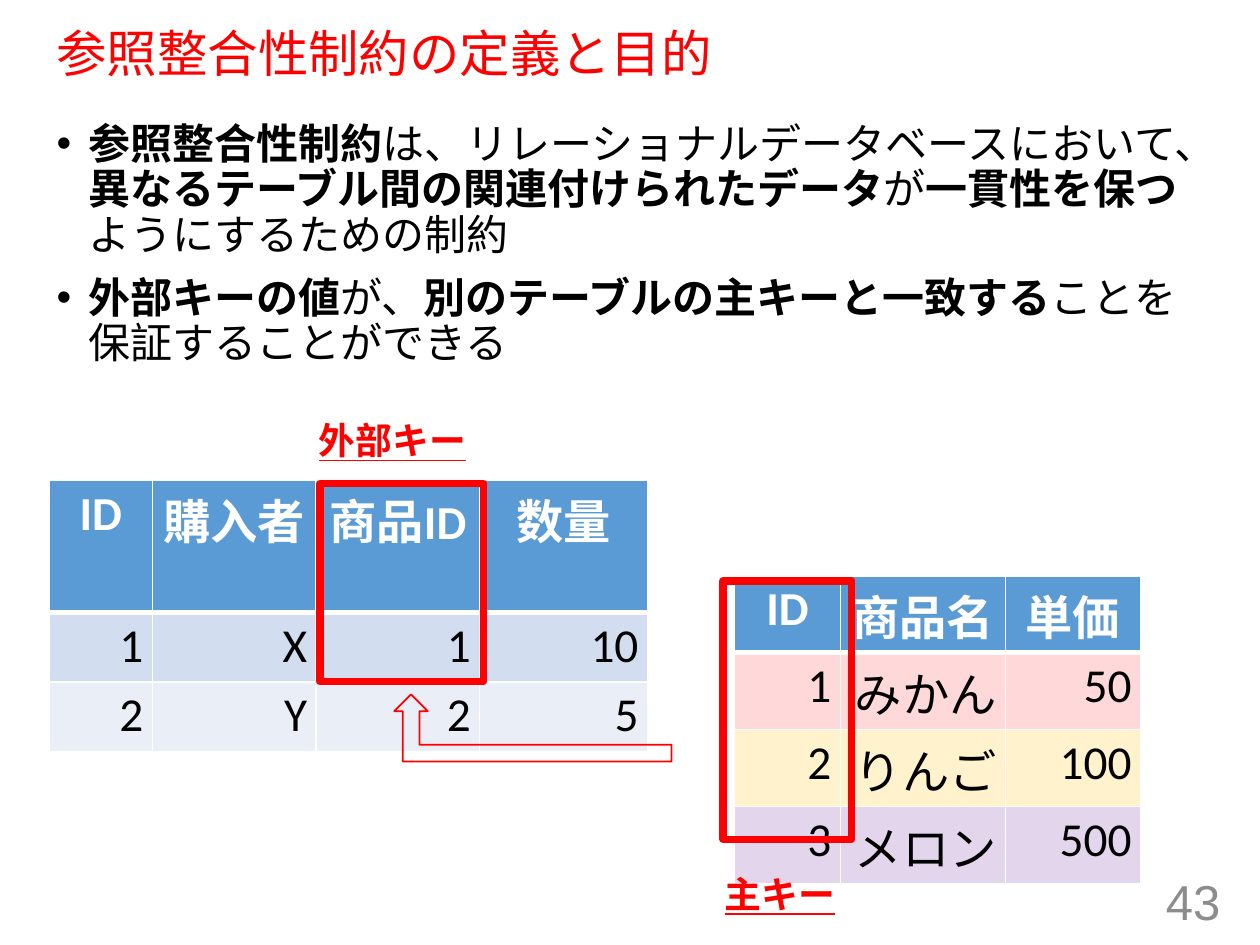
import pptx
import pptx.util
import pptx.dml.color
import pptx.enum.shapes
import pptx.enum.text
import pptx.oxml
import pptx.oxml.ns
from lxml import etree

Cm, Pt = pptx.util.Cm, pptx.util.Pt
ALIGN = pptx.enum.text.PP_ALIGN
ANCHOR = pptx.enum.text.MSO_ANCHOR
SHAPE = pptx.enum.shapes.MSO_SHAPE
qn = pptx.oxml.ns.qn

# Content: (text, bold) runs for each bullet
TITLE = "参照整合性制約の定義と目的"
PAGE_NUMBER = "43"
BULLETS = [
    [("参照整合性制約", True), ("は、リレーショナルデータベースにおいて、", False),
     ("異なるテーブル間の関連付けられたデータ", True), ("が", False),
     ("一貫性を保つ", True), ("ようにするための制約", False)],
    [("外部キーの値", True), ("が、", False),
     ("別のテーブルの主キーと一致する", True), ("ことを保証することができる", False)],
]

# Tables: fills are (colour, opacity in percent), one per row; lengths in cm
HEADER_FILL = ("5B9BD5", 100)
PRODUCTS = {
    "at": (14.81, 11.61), "columns": [2.13, 3.33, 2.72], "heights": [1.55] * 4,
    "fills": [HEADER_FILL, ("FF0000", 15), ("FFC000", 20), ("7030A0", 20)],
    "rows": [("ID", "商品名", "単価"), ("1", "みかん", "50"),
             ("2", "りんご", "100"), ("3", "メロン", "500")],
}
PURCHASES = {
    "at": (0.99, 9.68), "columns": [2.08, 3.3, 3.3, 3.38], "heights": [2.67, 1.4, 1.4],
    "fills": [HEADER_FILL, ("D2DEEF", 100), ("EAEFF7", 100)],
    "rows": [("ID", "購入者", "商品ID", "数量"), ("1", "X", "1", "10"),
             ("2", "Y", "2", "5")],
}
PRIMARY_KEY_FRAME = (14.58, 11.71, 2.59, 5.21)
FOREIGN_KEY_FRAME = (6.45, 9.75, 3.3, 3.99)
REFERENCE_ARROW = (7.95, 14, 5.59, 1.35)
KEY_LABELS = [("主キー", (14.43, 17.48, 6.81, 1.22)),
              ("外部キー", (6.25, 8.33, 6.81, 1.22))]


def colour(value):
    return pptx.dml.color.RGBColor.from_string(value)


def add_span(para, text, size, ink, font="Arial", bold=False, underline=False):
    span = para.add_run()
    span.text = text
    span.font.size = Pt(size)
    span.font.name = font
    span.font.bold = bold
    span.font.underline = underline
    span.font.color.rgb = colour(ink)


def add_box(page, place, anchor=ANCHOR.TOP):
    box = page.shapes.add_textbox(*map(Cm, place))
    box.text_frame.word_wrap = True
    box.text_frame.vertical_anchor = anchor
    return box.text_frame


def set_margins(target):
    target.margin_left = target.margin_right = Cm(0.18)
    target.margin_top = target.margin_bottom = Cm(0.1)


def set_bullet(para):
    props = para._p.get_or_add_pPr()
    props.set("marL", str(Cm(0.64)))
    props.set("indent", str(-Cm(0.64)))
    etree.SubElement(props, qn("a:buFont")).set("typeface", "Arial")
    etree.SubElement(props, qn("a:buChar")).set("char", "•")


def set_fill(cell, value, opacity):
    cell.fill.solid()
    cell.fill.fore_color.rgb = colour(value)
    if opacity < 100:
        tint = cell._tc.tcPr.find(".//" + qn("a:srgbClr"))
        etree.SubElement(tint, qn("a:alpha")).set("val", str(opacity * 1000))


def set_borders(cell, row):
    widths = {"L": 1, "R": 1, "T": 3 if row == 1 else 1, "B": 3 if row == 0 else 1}
    for position, (side, width) in enumerate(widths.items()):
        line = etree.Element(qn("a:ln" + side), w=str(Pt(width)))
        paint = etree.SubElement(line, qn("a:solidFill"))
        etree.SubElement(paint, qn("a:srgbClr")).set("val", "FFFFFF")
        cell._tc.tcPr.insert(position, line)


def add_data_table(page, data):
    rows, columns, heights = data["rows"], data["columns"], data["heights"]
    size = (sum(columns), sum(heights))
    table = page.shapes.add_table(len(rows), len(columns),
                                  *map(Cm, data["at"] + size)).table
    for column, width in zip(table.columns, columns):
        column.width = Cm(width)
    for r, texts in enumerate(rows):
        table.rows[r].height = Cm(heights[r])
        for c, text in enumerate(texts):
            cell = table.cell(r, c)
            set_margins(cell)
            set_fill(cell, *data["fills"][r])
            set_borders(cell, r)
            para = cell.text_frame.paragraphs[0]
            para.alignment = ALIGN.RIGHT if r else ALIGN.CENTER
            add_span(para, text, 27, "000000" if r else "FFFFFF", "Calibri", bold=r == 0)


def add_outline(page, kind, place, width):
    shape = page.shapes.add_shape(kind, *map(Cm, place))
    shape.shadow.inherit = False
    shape.fill.background()
    shape.line.color.rgb = colour("FF0000")
    shape.line.width = Pt(width)
    return shape


def main():
    deck = pptx.Presentation()
    deck.slide_width, deck.slide_height = Cm(25.4), Cm(19.05)
    page = deck.slides.add_slide(deck.slide_layouts[6])

    # Title
    para = add_box(page, (0.89, 0.48, 23.5, 1.3), ANCHOR.MIDDLE).paragraphs[0]
    para.line_spacing = 0.9
    add_span(para, TITLE, 28.8, "FF0000")

    # Bullets
    frame = add_box(page, (0.89, 2.36, 23.5, 14.81))
    for index, spans in enumerate(BULLETS):
        para = frame.add_paragraph() if index else frame.paragraphs[0]
        para.line_spacing = 0.9
        para.space_before = Pt(10)
        set_bullet(para)
        for text, bold in spans:
            add_span(para, text, 24, "000000", bold=bold)

    # Page number
    para = add_box(page, (19.13, 17.65, 5.72, 1.02), ANCHOR.MIDDLE).paragraphs[0]
    para.alignment = ALIGN.RIGHT
    add_span(para, PAGE_NUMBER, 28, "8C8C8C")

    # Tables with their key columns framed
    for data, key_frame in ((PRODUCTS, PRIMARY_KEY_FRAME),
                            (PURCHASES, FOREIGN_KEY_FRAME)):
        add_data_table(page, data)
        add_outline(page, SHAPE.RECTANGLE, key_frame, 4.25)

    # Arrow from the primary key to the foreign key
    arrow = add_outline(page, SHAPE.BENT_UP_ARROW, REFERENCE_ARROW, 1)
    arrow._element.spPr.xfrm.set("flipH", "1")

    # Key labels
    for text, place in KEY_LABELS:
        frame = add_box(page, place)
        set_margins(frame)
        para = frame.paragraphs[0]
        para.space_before = Pt(10)
        add_span(para, text, 21, "FF0000", "Calibri", bold=True, underline=True)

    deck.save("out.pptx")


if __name__ == "__main__":
    main()
